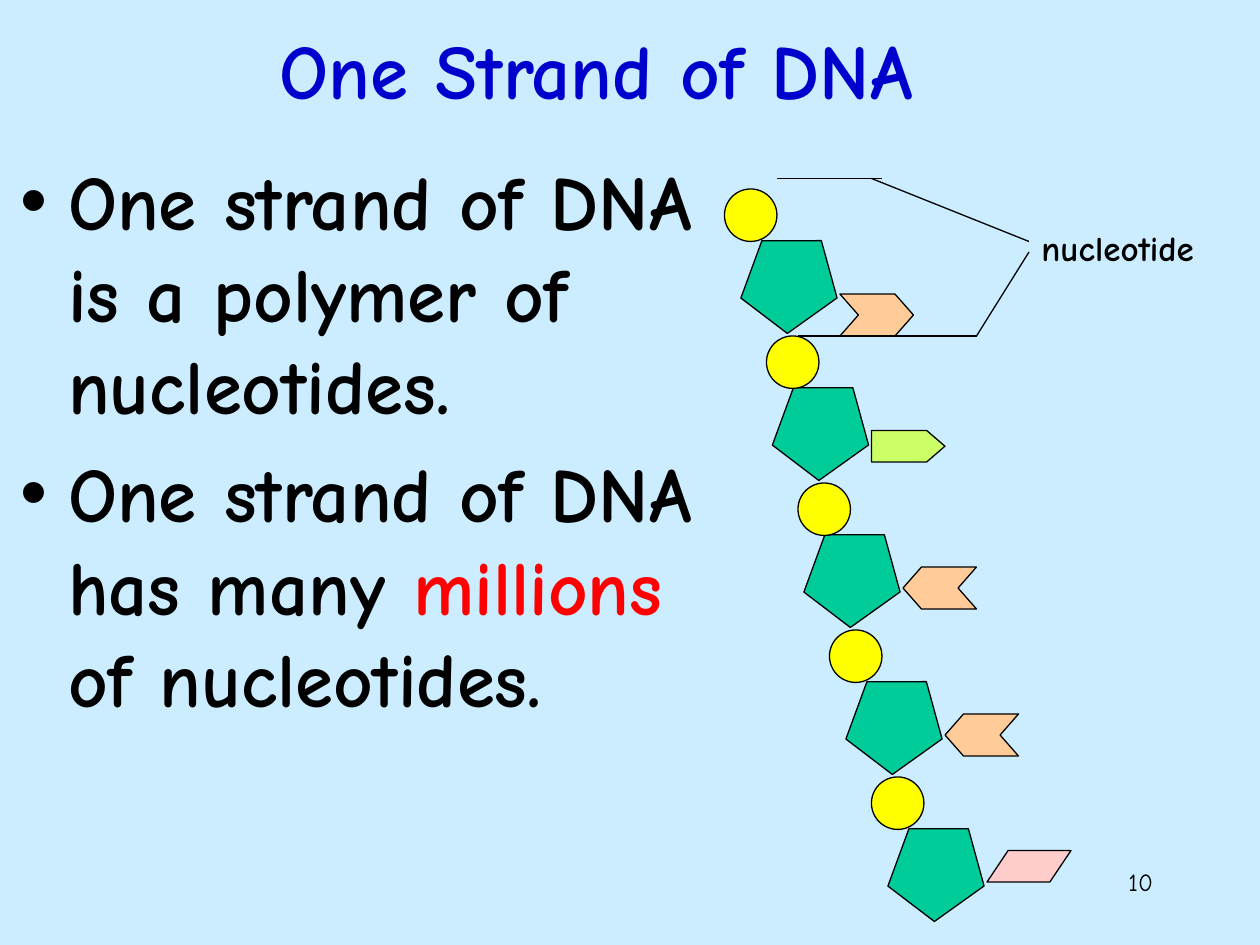
from pptx import Presentation
from pptx.dml.color import RGBColor
from pptx.enum.shapes import MSO_CONNECTOR, MSO_SHAPE as SHAPE
from pptx.enum.text import MSO_ANCHOR as ANCHOR, PP_ALIGN as ALIGN
from pptx.oxml.ns import qn
from pptx.util import Pt
from lxml.etree import SubElement

PX = 7620
FONT = "Comic Neue"
SKY = RGBColor(0xCC, 0xEC, 0xFF)
BLACK = RGBColor(0, 0, 0)
BLUE = RGBColor(0, 0, 0xCC)
RED = RGBColor(0xFF, 0, 0)
GREEN = RGBColor(0, 0xCC, 0x99)
YELLOW = RGBColor(0xFF, 0xFF, 0)
ORANGE = RGBColor(0xFF, 0xCC, 0x99)
LIME = RGBColor(0xCC, 0xFF, 0x66)
PINK = RGBColor(0xFF, 0xCC, 0xCC)

deck = Presentation()
deck.slide_width, deck.slide_height = 1200 * PX, 900 * PX
slide = deck.slides.add_slide(deck.slide_layouts[6])
slide.background.fill.solid()
slide.background.fill.fore_color.rgb = SKY


def add_text(paragraphs, box, size, color=BLACK, bold=True, align=ALIGN.LEFT,
             anchor=ANCHOR.TOP, bullet=False):
    frame = slide.shapes.add_textbox(*(v * PX for v in box)).text_frame
    frame.word_wrap = True
    frame.vertical_anchor = anchor
    for i, runs in enumerate(paragraphs):
        paragraph = frame.add_paragraph() if i else frame.paragraphs[0]
        paragraph.alignment = align
        if i:
            paragraph.space_before = Pt(size * 0.2)
        if bullet:
            properties = paragraph._p.get_or_add_pPr()
            properties.set("marL", str(45 * PX))
            properties.set("indent", str(-45 * PX))
            SubElement(properties, qn("a:buFont"), typeface="Arial")
            SubElement(properties, qn("a:buChar"), char="•")
        for words, run_color in runs:
            run = paragraph.add_run()
            run.text = words
            run.font.name = FONT
            run.font.size = Pt(size)
            run.font.bold = bold
            run.font.color.rgb = run_color or color


def add_part(kind, box, fill, rotation=0, adjustment=None):
    part = slide.shapes.add_shape(kind, *(v * PX for v in box))
    part.shadow.inherit = False
    part.rotation = rotation
    if adjustment is not None:
        part.adjustments[0] = adjustment
    part.fill.solid()
    part.fill.fore_color.rgb = fill
    part.line.color.rgb = BLACK
    part.line.width = Pt(0.75)


add_text([[("10", None)]], (860, 820, 250, 60), 14, bold=False, align=ALIGN.RIGHT)
add_text([[("One Strand of DNA", None)]], (58, -10, 1020, 150), 44, color=BLUE,
         align=ALIGN.CENTER, anchor=ANCHOR.MIDDLE)
add_text([[("One strand of DNA is a polymer of nucleotides.", None)],
          [("One strand of DNA has many ", None), ("millions", RED),
           (" of nucleotides.", None)]],
         (8, 140, 694, 748), 44, bullet=True)

STEP = 140
sugar_lefts = [710, 740, 770, 810, 850]
phosphate_lefts = [690, 730, 760, 790, 830]
for i, left in enumerate(sugar_lefts):
    add_part(SHAPE.REGULAR_PENTAGON, (left, 220 + i * STEP, 90, 90), GREEN, rotation=37.3)
for i, left in enumerate(phosphate_lefts):
    add_part(SHAPE.OVAL, (left, 180 + i * STEP, 50, 50), YELLOW)

bases = [
    (SHAPE.CHEVRON, 800, 280, 70, 40, ORANGE, 0, 0.44),
    (SHAPE.PENTAGON, 830, 410, 70, 30, LIME, 0, 0.58),
    (SHAPE.CHEVRON, 860, 540, 70, 40, ORANGE, 180, 0.44),
    (SHAPE.CHEVRON, 900, 680, 70, 40, ORANGE, 180, 0.44),
    (SHAPE.PARALLELOGRAM, 940, 810, 80, 30, PINK, 0, 0.67),
]
for kind, left, top, width, height, fill, rotation, adjustment in bases:
    add_part(kind, (left, top, width, height), fill, rotation, adjustment)

bracket = [(740, 170, 840, 170), (760, 320, 930, 320),
           (830, 170, 980, 230), (930, 320, 980, 240)]
for ends in bracket:
    line = slide.shapes.add_connector(MSO_CONNECTOR.STRAIGHT, *(v * PX for v in ends))
    line.line.color.rgb = BLACK
    line.line.width = Pt(0.75)
    SubElement(line._element.spPr, qn("a:effectLst"))

add_text([[("nucleotide", None)]], (980, 210, 210, 52), 20)

deck.save("out.pptx")
